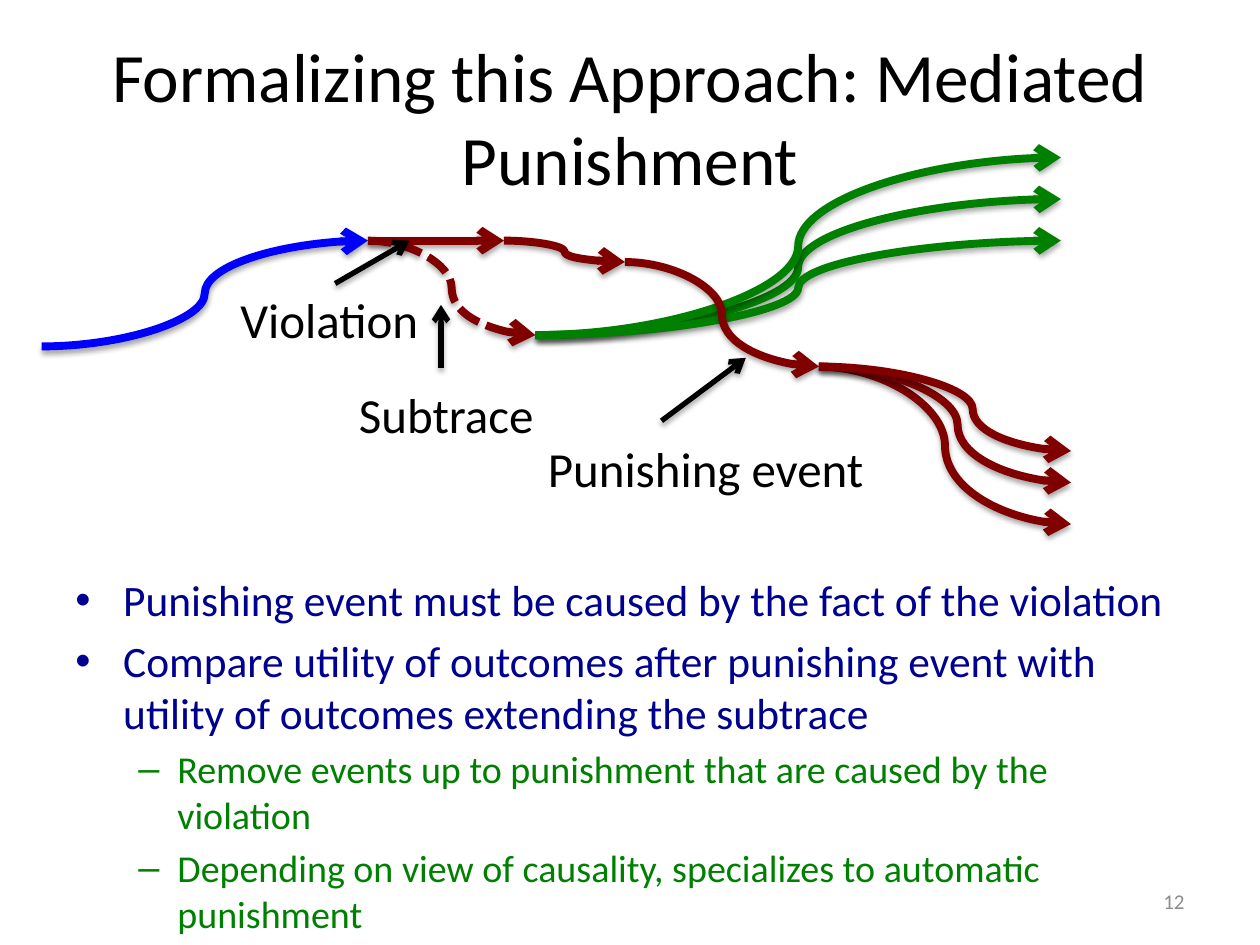
from lxml import etree
from pptx import Presentation
from pptx import util as u
from pptx.dml.color import RGBColor
from pptx.enum import dml, shapes, text
from pptx.oxml import parse_xml
from pptx.oxml.ns import qn

BLACK, BLUE, RED, GREEN = "000000", "0000FF", "800000", "008000"
NAVY, GRAY = "000090", "8C8C8C"
NS = 'xmlns:a="http://schemas.openxmlformats.org/drawingml/2006/main"'
SHADOW = (f'<a:effectLst {NS}><a:outerShdw blurRad="40000" dist="23000" '
          'dir="5400000" rotWithShape="0"><a:srgbClr val="000000">'
          '<a:alpha val="35000"/></a:srgbClr></a:outerShdw></a:effectLst>')


def color(value):
    return RGBColor.from_string(value)


def style(para, size, tint):
    for run in para.runs:
        run.font.name = "Calibri"
        run.font.size = u.Pt(size)
        run.font.color.rgb = color(tint)


def add_text(slide, box, words, size, tint=BLACK, align=text.PP_ALIGN.LEFT,
             anchor=text.MSO_ANCHOR.TOP, wrap=True):
    frame = slide.shapes.add_textbox(*map(u.Inches, box)).text_frame
    frame.word_wrap = wrap
    frame.vertical_anchor = anchor
    frame.text = words
    frame.paragraphs[0].alignment = align
    style(frame.paragraphs[0], size, tint)
    return frame


def add_arrow(slide, origin, start, end, tint, width=4.5, curve=True,
              bend=None, dash=False):
    kind = shapes.MSO_CONNECTOR.CURVE if curve else shapes.MSO_CONNECTOR.STRAIGHT
    ends = [u.Inches(o + p) for spot in (start, end)
            for o, p in zip(origin, spot)]
    link = slide.shapes.add_connector(kind, *ends)
    link.line.color.rgb = color(tint)
    link.line.width = u.Pt(width)
    if dash:
        link.line.dash_style = dml.MSO_LINE.SQUARE_DOT
    props = link._element.spPr
    # Arrowhead, shadow and the place of the bend
    etree.SubElement(props.find(qn("a:ln")), qn("a:tailEnd"), type="arrow")
    props.append(parse_xml(SHADOW))
    if bend:
        guides = props.find(qn("a:prstGeom")).get_or_add_avLst()
        etree.SubElement(guides, qn("a:gd"), name="adj1",
                         fmla=f"val {round(bend * 100000)}")


def add_traces(slide, left, top):
    box = (left, top)
    # Points where the traces meet
    origin, breach, react = (0, 1.5), (2.59, 0.66), (3.67, 0.66)
    middle, punish, sub = (4.63, 0.83), (6.17, 1.66), (3.92, 1.41)

    add_arrow(slide, box, origin, breach, BLUE)
    add_arrow(slide, box, breach, react, RED, curve=False)

    # Outcomes of the subtrace and of the punishment
    for y in (0.33, 0, 0.66):
        add_arrow(slide, box, sub, (8.09, y), GREEN)
    for y, bend in ((2.91, 0.5), (2.58, 0.55), (2.33, 0.61)):
        add_arrow(slide, box, punish, (8.17, y), RED, bend=bend)

    add_arrow(slide, box, middle, punish, RED)
    add_arrow(slide, box, breach, sub, RED, dash=True)
    add_arrow(slide, box, react, middle, RED)

    # Labels, each with its pointer
    labels = (
        ("Punishing event", (3.92, 2.18), 2.73, (4.92, 2.09), (5.59, 1.59)),
        ("Subtrace", (2.42, 1.75), 1.6, (3.17, 1.67), (3.17, 1.17)),
        ("Violation", (1.48, 1), 1.69, (2.33, 1), (2.92, 0.66)),
    )
    for words, (x, y), width, start, end in labels:
        add_arrow(slide, box, start, end, BLACK, 3, curve=False)
        add_text(slide, (left + x, top + y, width, 0.57), words, 28, wrap=False)


def add_points(slide, box):
    # Mark, size, colour, left margin and hanging indent of each level
    levels = (("•", 24.8, NAVY, 0.38, 0.38), ("–", 21.7, GREEN, 0.81, 0.31))
    points = (
        (0, "Punishing event must be caused by the fact of the violation"),
        (0, "Compare utility of outcomes after punishing event with "
            "utility of outcomes extending the subtrace"),
        (1, "Remove events up to punishment that are caused by the violation"),
        (1, "Depending on view of causality, specializes to automatic "
            "punishment"),
    )
    frame = add_text(slide, box, "", 24.8)
    for i, (level, words) in enumerate(points):
        mark, size, tint, margin, hang = levels[level]
        para = frame.add_paragraph() if i else frame.paragraphs[0]
        para.text = words
        para.level = level
        para.space_before = u.Pt(size * 0.2)
        style(para, size, tint)
        props = para._p.get_or_add_pPr()
        props.set("marL", str(u.Inches(margin)))
        props.set("indent", str(-u.Inches(hang)))
        etree.SubElement(props, qn("a:buFont"), typeface="Arial")
        etree.SubElement(props, qn("a:buChar"), char=mark)


def main():
    deck = Presentation()
    deck.slide_width, deck.slide_height = u.Inches(10), u.Inches(7.5)
    slide = deck.slides.add_slide(deck.slide_layouts[6])
    middle = text.MSO_ANCHOR.MIDDLE
    add_text(slide, (0.5, 0.3, 9, 1.25),
             "Formalizing this Approach: Mediated Punishment", 39.6,
             align=text.PP_ALIGN.CENTER, anchor=middle)
    add_points(slide, (0.5, 4.5, 9, 2.58))
    add_traces(slide, 0.33, 1.25)
    # Slide number
    add_text(slide, (7.17, 6.95, 2.33, 0.4), "12", 12, GRAY,
             text.PP_ALIGN.RIGHT, middle)
    deck.save("out.pptx")


if __name__ == "__main__":
    main()
